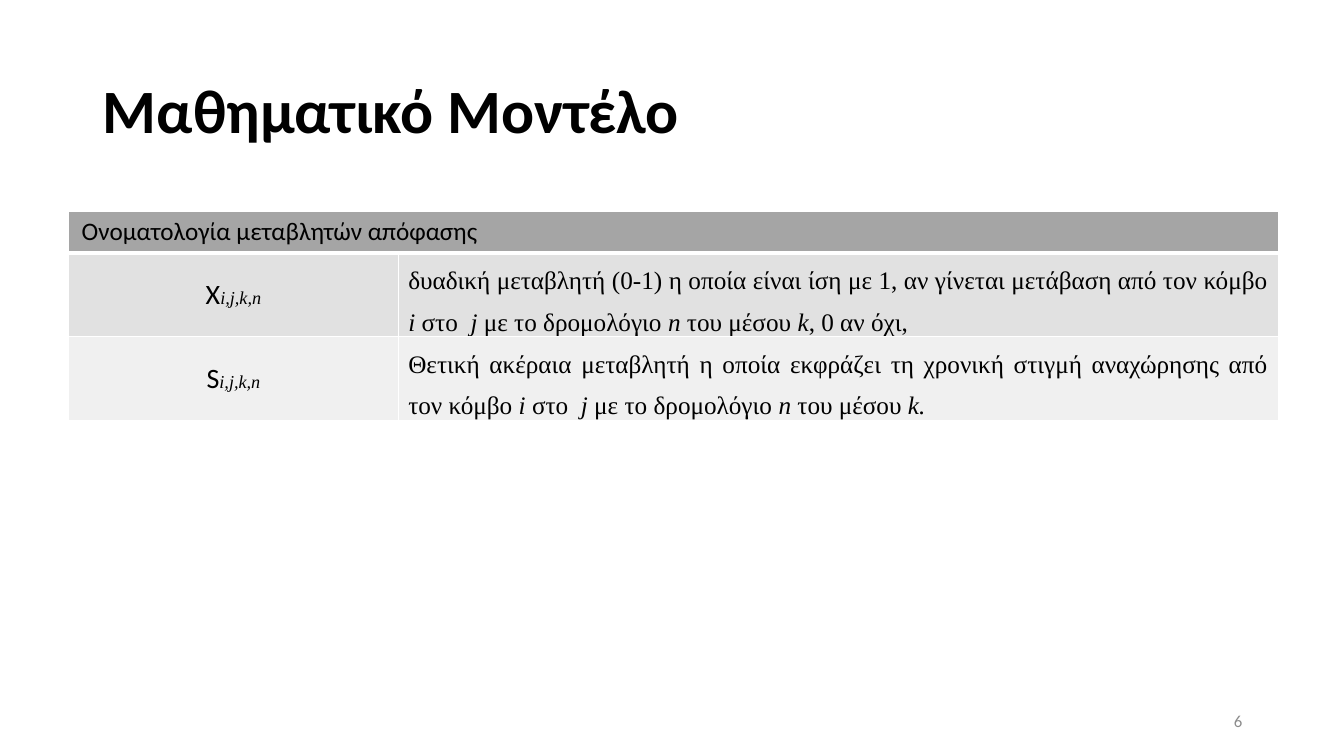
from lxml.etree import SubElement
from pptx import Presentation
from pptx.dml.color import RGBColor
from pptx.enum.text import MSO_ANCHOR as Anchor, PP_ALIGN as Align
from pptx.oxml.ns import qn
from pptx.util import Inches, Pt

BLACK = RGBColor(0x00, 0x00, 0x00)
WHITE = RGBColor(0xFF, 0xFF, 0xFF)
GRAY = RGBColor(0x8C, 0x8C, 0x8C)
HEAD = RGBColor(0xA5, 0xA5, 0xA5)
BANDS = [RGBColor(0xE1, 0xE1, 0xE1), RGBColor(0xF0, 0xF0, 0xF0)]
SANS, SERIF = "Calibri", "Times New Roman"

INDEX = "i,j,k,n"
ROUTE = [("i ", True), ("στο  ", False), ("j", True),
         (" με το δρομολόγιο ", False), ("n ", True), ("του μέσου ", False)]
ROWS = [
    ("X", [("δυαδική μεταβλητή (0-1) η οποία είναι ίση με 1, "
            "αν γίνεται μετάβαση από τον κόμβο ", False),
           *ROUTE, ("k", True), (", 0 αν όχι,", False)]),
    ("S", [("Θετική ακέραια μεταβλητή η οποία εκφράζει τη χρονική στιγμή "
            "αναχώρησης από τον κόμβο ", False),
           *ROUTE, ("k.", True)]),
]


def add_run(para, text, size, font=SANS, color=BLACK, bold=False, italic=False):
    run = para.add_run()
    run.text = text
    run.font.name, run.font.size = font, Pt(size)
    run.font.bold, run.font.italic = bold, italic
    run.font.color.rgb = color


def set_edges(cell, bottom=1):
    """Draw white borders; they must come before the cell's fill."""
    props = cell._tc.get_or_add_tcPr()
    for side, width in (("L", 1), ("R", 1), ("T", 1), ("B", bottom)):
        line = SubElement(props, qn(f"a:ln{side}"), w=str(Pt(width)))
        fill = SubElement(line, qn("a:solidFill"))
        SubElement(fill, qn("a:srgbClr"), val=str(WHITE))


def style_cell(cell, color, side=0.13, end=0.05, anchor=Anchor.MIDDLE, bottom=1):
    set_edges(cell, bottom)
    cell.fill.solid()
    cell.fill.fore_color.rgb = color
    cell.margin_left = cell.margin_right = Inches(side)
    cell.margin_top = cell.margin_bottom = Inches(end)
    cell.vertical_anchor = anchor
    return cell.text_frame.paragraphs[0]


def add_title(slide, text):
    title = slide.shapes.title
    title.left, title.top = Inches(0.92), Inches(0.4)
    title.width, title.height = Inches(11.5), Inches(1.45)
    title.text_frame.vertical_anchor = Anchor.MIDDLE
    para = title.text_frame.paragraphs[0]
    para.alignment = Align.LEFT
    para.line_spacing = 0.9
    add_run(para, text, 44, bold=True)


def add_grid(slide, head, rows):
    frame = slide.shapes.add_table(len(rows) + 1, 2, Inches(0.68), Inches(2.1),
                                   Inches(12), Inches(2.07))
    table = frame.table
    for col, width in zip(table.columns, (3.27, 8.73)):
        col.width = Inches(width)
    for row, height in zip(table.rows, (0.41, 0.83, 0.83)):
        row.height = Inches(height)

    table.cell(0, 0).merge(table.cell(0, 1))
    for col in range(2):
        para = style_cell(table.cell(0, col), HEAD, bottom=3)
        if col == 0:
            add_run(para, head, 18)

    for num, ((name, parts), band) in enumerate(zip(rows, BANDS), 1):
        para = style_cell(table.cell(num, 0), band)
        para.alignment = Align.CENTER
        add_run(para, name, 20)
        add_run(para, INDEX, 13, SERIF, italic=True)
        para = style_cell(table.cell(num, 1), band, 0.1, 0, Anchor.TOP)
        para.alignment = Align.JUSTIFY
        para.line_spacing = 1.5
        for text, italic in parts:
            add_run(para, text, 18, SERIF, italic=italic)


def add_number(slide, text):
    box = slide.shapes.add_textbox(Inches(9.42), Inches(6.95),
                                   Inches(3), Inches(0.4))
    box.text_frame.word_wrap = True
    box.text_frame.vertical_anchor = Anchor.MIDDLE
    para = box.text_frame.paragraphs[0]
    para.alignment = Align.RIGHT
    add_run(para, text, 12, color=GRAY)


def main():
    deck = Presentation()
    deck.slide_width, deck.slide_height = Inches(13.33), Inches(7.5)
    slide = deck.slides.add_slide(deck.slide_layouts[5])
    add_title(slide, "Μαθηματικό Μοντέλο")
    add_grid(slide, "Ονοματολογία μεταβλητών απόφασης", ROWS)
    add_number(slide, "6")
    deck.save("out.pptx")


if __name__ == "__main__":
    main()
